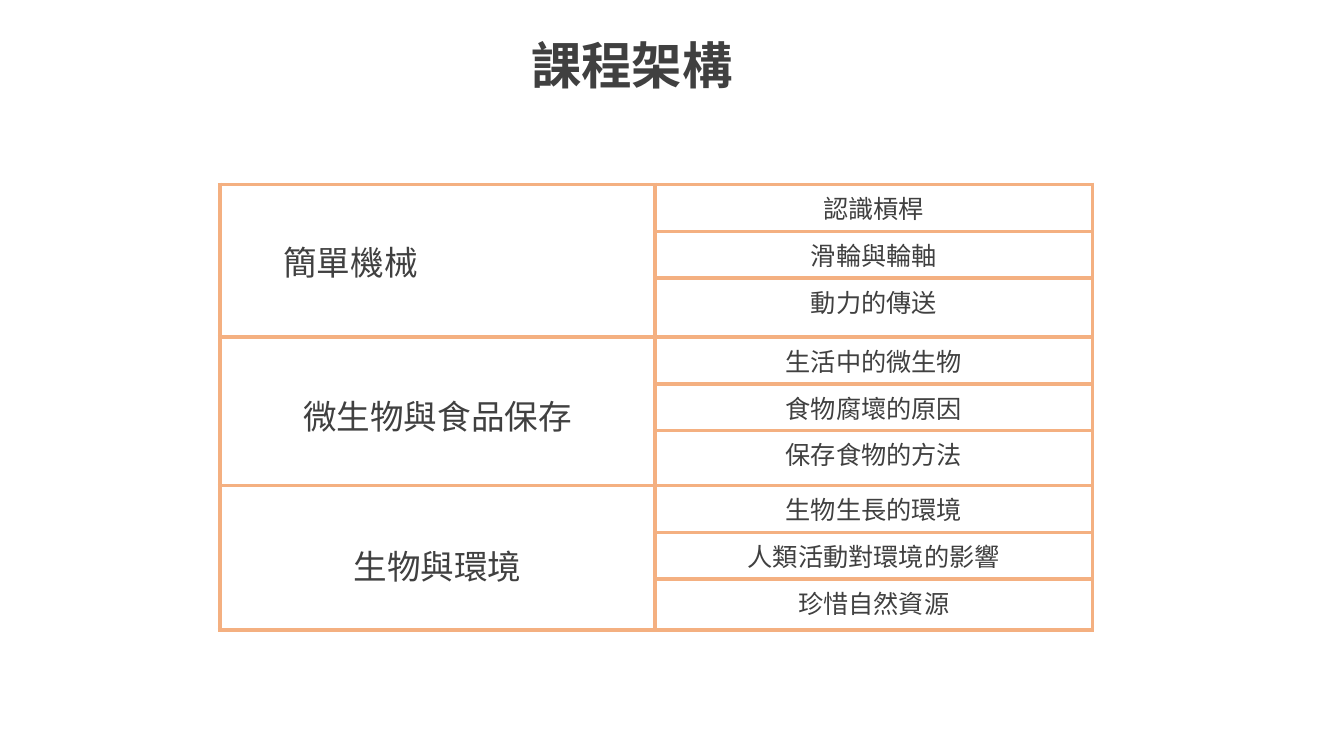
from lxml import etree
from pptx import Presentation
from pptx import util as u
from pptx.dml.color import RGBColor
from pptx.enum import text
from pptx.oxml import ns

COLORS = {"ink": "404040", "border": "F4B081", "cell": "FFFFFF"}
FONT = "Noto Sans CJK SC"

# Each unit: name, its lessons, alignment, left margin and top margin in cm
UNITS = [
    ("簡單機械", ["認識槓桿", "滑輪與輪軸", "動力的傳送"],
     text.PP_ALIGN.LEFT, 1.6, 0.13),
    ("微生物與食品保存", ["生活中的微生物", "食物腐壞的原因", "保存食物的方法"],
     text.PP_ALIGN.CENTER, 0.25, 0.33),
    ("生物與環境", ["生物生長的環境", "人類活動對環境的影響", "珍惜自然資源"],
     text.PP_ALIGN.CENTER, 0.25, 0.48),
]
ROW_HEIGHTS = [1.18, 1.17, 1.49, 1.18, 1.17, 1.39, 1.18, 1.17, 1.29]
COLUMN_WIDTHS = [10.97, 11.02]


class SlideBuilder:
    def __init__(self, presentation):
        self.slide = presentation.slides.add_slide(presentation.slide_layouts[5])

    def add_run(self, paragraph, words, size, bold=False):
        run = paragraph.add_run()
        run.text = words
        run.font.size = u.Pt(size)
        run.font.bold = bold
        run.font.color.rgb = RGBColor.from_string(COLORS["ink"])
        run.font.name = FONT
        east_asian = etree.SubElement(run.font._element, ns.qn("a:ea"))
        east_asian.set("typeface", FONT)

    def title(self, words, left, top, width, height):
        shape = self.slide.shapes.title
        shape.left, shape.top = u.Cm(left), u.Cm(top)
        shape.width, shape.height = u.Cm(width), u.Cm(height)
        frame = shape.text_frame
        frame.word_wrap = True
        frame.vertical_anchor = text.MSO_ANCHOR.BOTTOM
        paragraph = frame.paragraphs[0]
        paragraph.alignment = text.PP_ALIGN.LEFT
        paragraph.line_spacing = 0.9
        self.add_run(paragraph, words, 36, bold=True)

    def style_cell(self, cell):
        properties = cell._tc.get_or_add_tcPr()
        for side in ("a:lnL", "a:lnR", "a:lnT", "a:lnB"):
            line = etree.SubElement(properties, ns.qn(side), w=str(u.Pt(3)))
            fill = etree.SubElement(line, ns.qn("a:solidFill"))
            etree.SubElement(fill, ns.qn("a:srgbClr"), val=COLORS["border"])
        cell.fill.solid()
        cell.fill.fore_color.rgb = RGBColor.from_string(COLORS["cell"])

    def table(self, left, top, widths, heights):
        table = self.slide.shapes.add_table(
            len(heights), len(widths), u.Cm(left), u.Cm(top),
            u.Cm(sum(widths)), u.Cm(sum(heights))).table
        table.first_row = table.horz_banding = False
        for column, width in zip(table.columns, widths):
            column.width = u.Cm(width)
        for row, height in zip(table.rows, heights):
            row.height = u.Cm(height)
        for cell in table.iter_cells():
            self.style_cell(cell)
        return table

    def cell_text(self, cell, words, size, alignment=text.PP_ALIGN.CENTER):
        paragraph = cell.text_frame.paragraphs[0]
        paragraph.alignment = alignment
        self.add_run(paragraph, words, size)


def main():
    presentation = Presentation()
    presentation.slide_width, presentation.slide_height = u.Cm(33.87), u.Cm(19.05)
    builder = SlideBuilder(presentation)

    # Heading
    builder.title("課程架構", 13.13, 0.89, 5.61, 1.65)

    # Units on the left, their lessons on the right
    table = builder.table(5.54, 4.65, COLUMN_WIDTHS, ROW_HEIGHTS)
    first_row = 0
    for unit, lessons, alignment, margin_left, margin_top in UNITS:
        unit_cell = table.cell(first_row, 0)
        unit_cell.merge(table.cell(first_row + len(lessons) - 1, 0))
        unit_cell.vertical_anchor = text.MSO_ANCHOR.MIDDLE
        unit_cell.margin_left = u.Cm(margin_left)
        unit_cell.margin_top = u.Cm(margin_top)
        builder.cell_text(unit_cell, unit, 24, alignment)
        for row, lesson in enumerate(lessons, first_row):
            builder.cell_text(table.cell(row, 1), lesson, 18)
        first_row += len(lessons)

    presentation.save("out.pptx")


if __name__ == "__main__":
    main()
